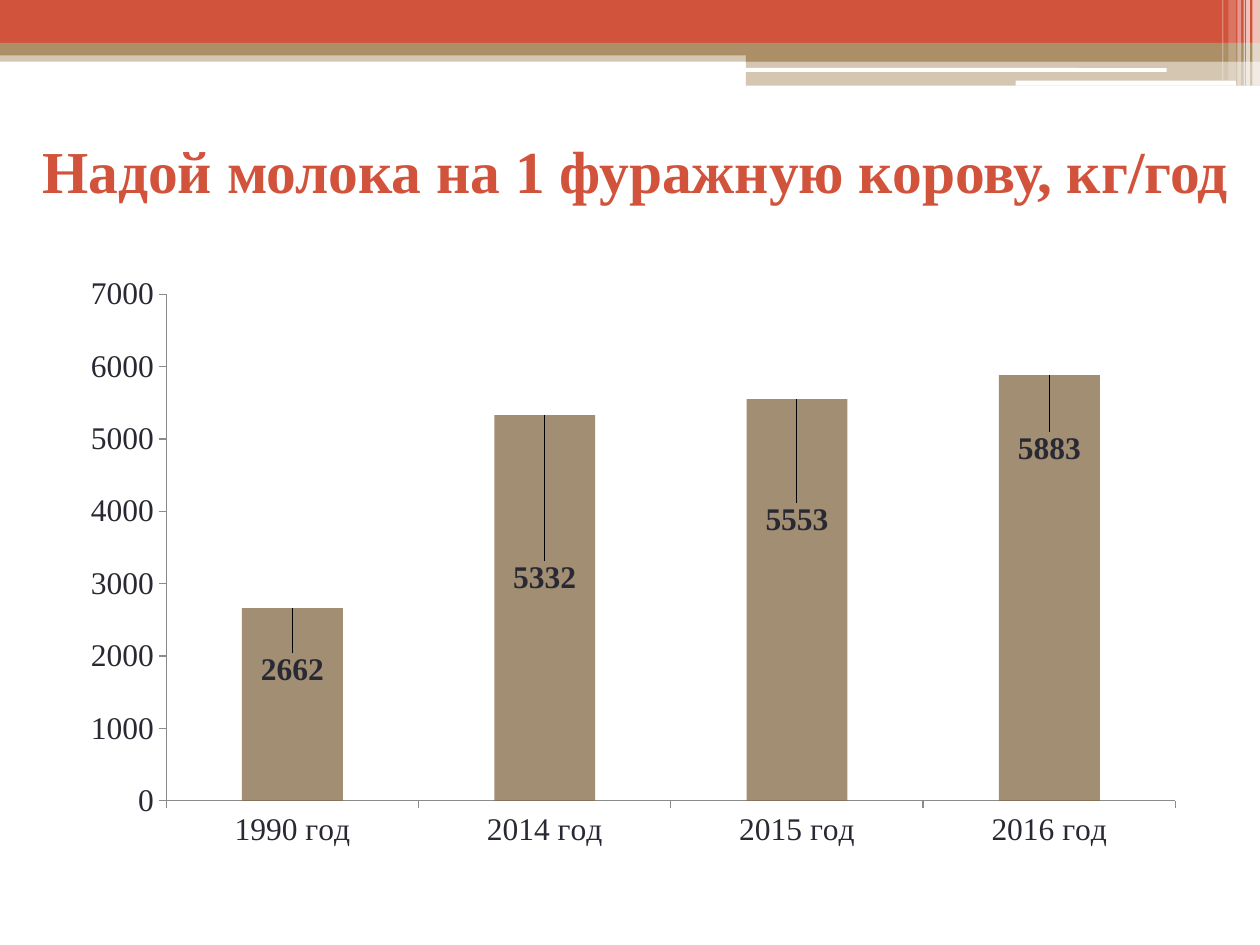
from lxml import etree
from pptx import Presentation
from pptx import util as u
from pptx.chart.data import CategoryChartData
from pptx.dml.color import RGBColor
from pptx.enum import chart as ch
from pptx.enum import shapes, text
from pptx.oxml.ns import qn

RED = RGBColor(0xD2, 0x53, 0x3C)
TAN = RGBColor(0xAD, 0x8F, 0x67)
BROWN = RGBColor(0x86, 0x6C, 0x49)
WHITE = RGBColor(0xFF, 0xFF, 0xFF)
INK = RGBColor(0x29, 0x29, 0x34)
GRAY = RGBColor(0x8B, 0x8B, 0x8B)
FONT = "Times New Roman"

RECT = shapes.MSO_SHAPE.RECTANGLE
ROUND = shapes.MSO_SHAPE.ROUNDED_RECTANGLE

# left, top, width, height, colour, opacity in percent, kind
BANDS = [
    (0, 0.4, 10, 0.09, TAN, 50, RECT),
    (0, 0, 10, 0.34, RED, 100, RECT),
    (0, 0.34, 10, 0.1, TAN, 100, RECT),
    (5.92, 0.39, 4.08, 0.1, TAN, 100, RECT),
    (5.92, 0.48, 4.08, 0.2, TAN, 50, RECT),
    (5.91, 0.54, 3.35, 0.03, WHITE, 100, ROUND),
    (8.06, 0.64, 1.75, 0.04, WHITE, 100, ROUND),
]
# left, width, height, opacity in percent
STRIPES = [
    (9.94, 0.06, 0.68, 65),
    (9.89, 0.03, 0.68, 65),
    (9.87, 0.01, 0.68, 60),
    (9.82, 0.03, 0.68, 40),
    (9.75, 0.06, 0.64, 20),
    (9.7, 0.01, 0.64, 30),
]
# year, yield, label shift as a share of the chart's width and height
YIELDS = [
    ("1990 год", 2662, 0, 0.14),
    ("2014 год", 5332, 0, 0.31),
    ("2015 год", 5553, 0, 0.24),
    ("2016 год", 5883, 0, 0.16),
]


def paint(fill, color, alpha=100):
    fill.solid()
    fill.fore_color.rgb = color
    if alpha < 100:
        node = fill._xPr.find(".//" + qn("a:srgbClr"))
        etree.SubElement(node, qn("a:alpha")).set("val", str(alpha * 1000))


def add_band(slide, left, top, width, height, color, alpha, kind=RECT):
    box = map(u.Inches, (left, top, width, height))
    band = slide.shapes.add_shape(kind, *box)
    band.shadow.inherit = False
    band.line.fill.background()
    paint(band.fill, color, alpha)


def add_title(slide, words):
    box = slide.shapes.add_textbox(
        u.Inches(0.2), u.Inches(0.76), u.Inches(9.69), u.Inches(1.17))
    frame = box.text_frame
    frame.word_wrap = True
    frame.vertical_anchor = text.MSO_ANCHOR.MIDDLE
    frame.margin_left = frame.margin_right = 0
    para = frame.paragraphs[0]
    para.text = words
    para.alignment = text.PP_ALIGN.CENTER
    set_font(para.font, 34, RED, True)


def set_font(font, size, color, bold=False):
    font.name = FONT
    font.size = u.Pt(size)
    font.color.rgb = color
    font.bold = bold


def place(layout, **parts):
    """Fill a chart layout element with manual values."""
    manual = etree.SubElement(layout, qn("c:manualLayout"))
    for tag, val in parts.items():
        etree.SubElement(manual, qn("c:" + tag)).set("val", str(val))


def style_axis(axis):
    axis.has_major_gridlines = False
    axis.major_tick_mark = ch.XL_TICK_MARK.OUTSIDE
    axis.minor_tick_mark = ch.XL_TICK_MARK.NONE
    axis.format.line.color.rgb = GRAY
    axis.format.line.width = u.Pt(0.75)


def add_labels(chart, series):
    for i in range(len(YIELDS)):
        label = series.points[i].data_label
        set_font(label.font, 18, INK, True)
        label.position = ch.XL_LABEL_POSITION.OUTSIDE_END
    nodes = chart._chartSpace.iter(qn("c:dLbl"))
    for node, (_, _, x, y) in zip(nodes, YIELDS):
        layout = etree.Element(qn("c:layout"))
        node.find(qn("c:idx")).addnext(layout)
        place(layout, x=x, y=y)


def add_yields(slide):
    data = CategoryChartData()
    data.categories = [row[0] for row in YIELDS]
    data.add_series("Надой", [row[1] for row in YIELDS])
    chart = slide.shapes.add_chart(
        ch.XL_CHART_TYPE.COLUMN_CLUSTERED, u.Inches(0.51), u.Inches(2.1),
        u.Inches(9), u.Inches(4.73), data).chart
    chart.has_title = chart.has_legend = False
    set_font(chart.font, 18, INK)
    style_axis(chart.category_axis)
    style_axis(chart.value_axis)
    chart.value_axis.minimum_scale = 0
    chart.value_axis.maximum_scale = 7000
    chart.value_axis.major_unit = 1000

    plot = chart.plots[0]
    plot.gap_width = 150
    plot.vary_by_categories = False
    series = plot.series[0]
    paint(series.format.fill, BROWN, 77)
    add_labels(chart, series)

    area = chart._chartSpace.find(".//" + qn("c:plotArea"))
    layout = area.find(qn("c:layout"))
    if layout is None:
        layout = etree.Element(qn("c:layout"))
        area.insert(0, layout)
    place(layout, layoutTarget="inner", xMode="edge", yMode="edge",
          x=0.09, y=0.05, w=0.89, h=0.85)


def main():
    deck = Presentation()
    deck.slide_width = u.Inches(10)
    deck.slide_height = u.Inches(7.5)
    slide = deck.slides.add_slide(deck.slide_layouts[6])
    for band in BANDS:
        add_band(slide, *band)
    for left, width, height, alpha in STRIPES:
        add_band(slide, left, 0, width, height, WHITE, alpha)
    add_title(slide, "Надой молока на 1 фуражную корову, кг/год")
    add_yields(slide)
    deck.save("out.pptx")


if __name__ == "__main__":
    main()
